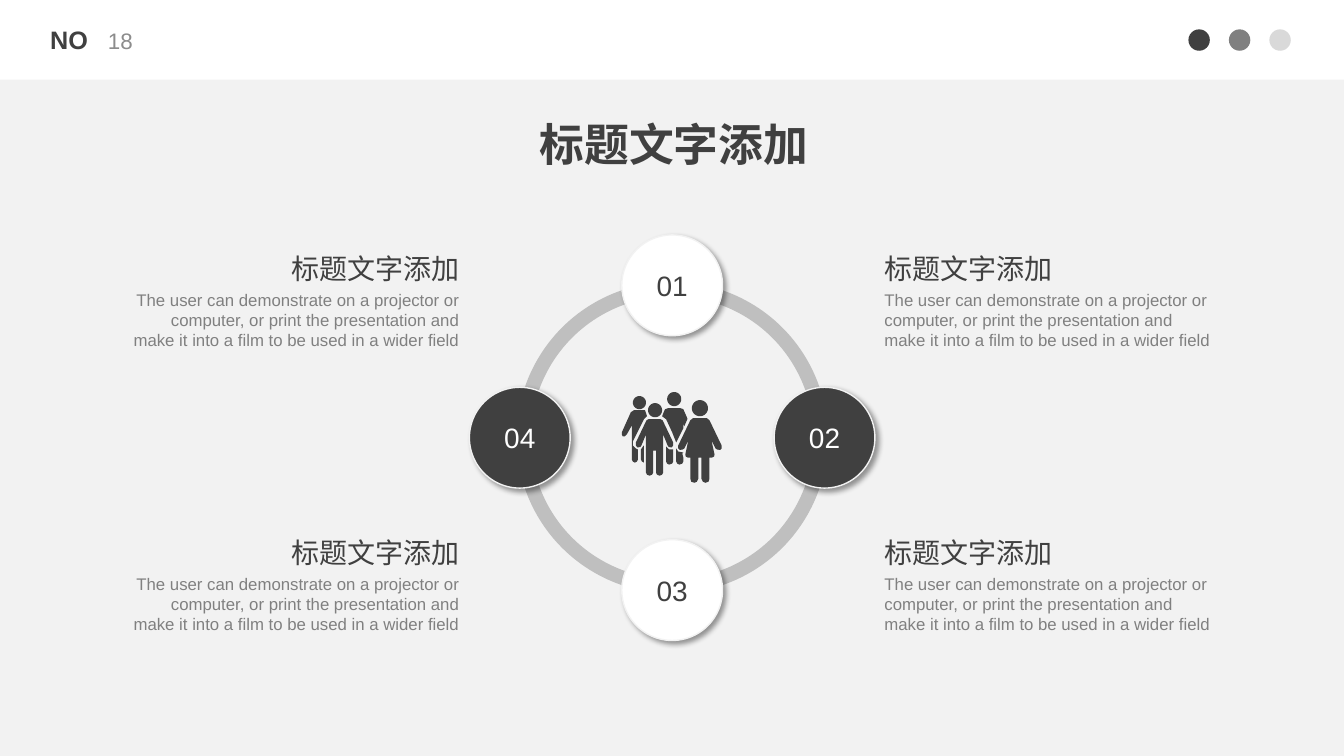
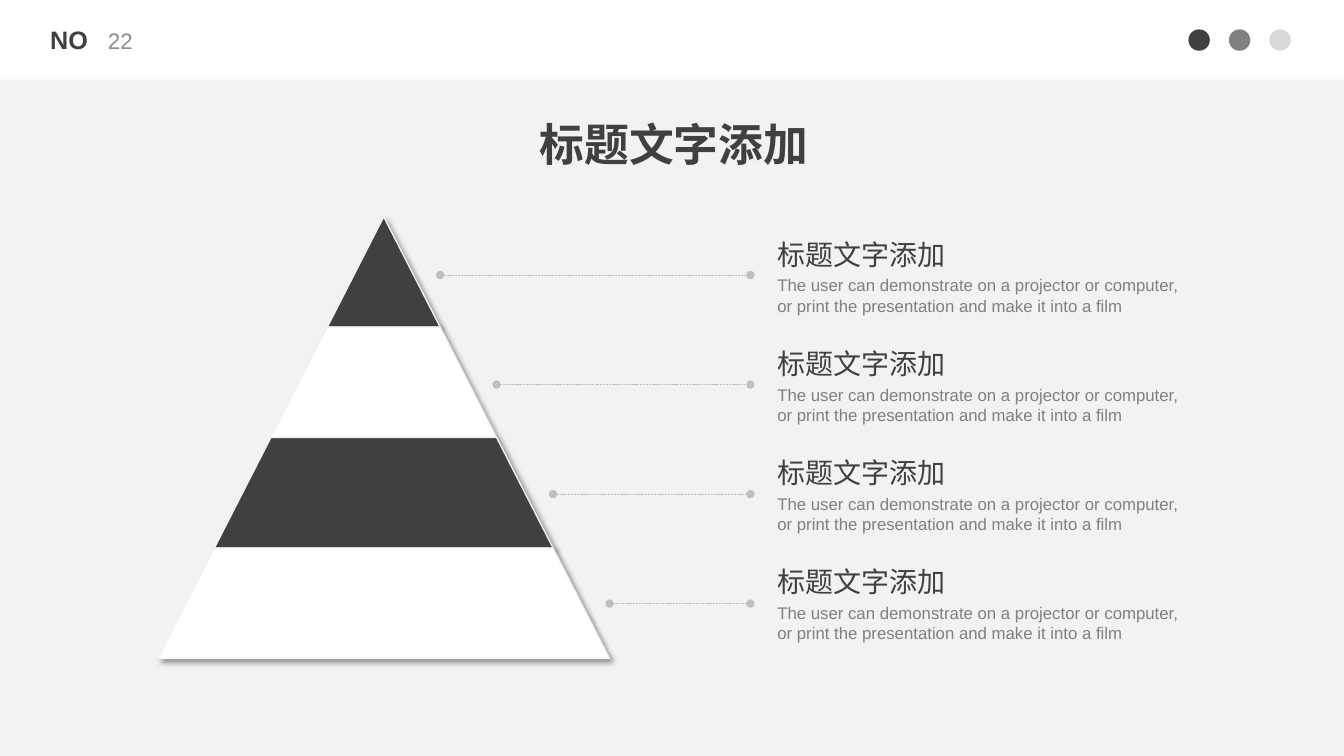
from math import cos, pi, sin

from lxml.etree import SubElement
from pptx import Presentation
from pptx.dml.color import RGBColor
from pptx.enum.dml import MSO_LINE
from pptx.enum.shapes import MSO_CONNECTOR, MSO_SHAPE as SHAPE
from pptx.enum.text import MSO_ANCHOR as ANCHOR, MSO_AUTO_SIZE, PP_ALIGN as ALIGN
from pptx.oxml.ns import qn
from pptx.util import Cm, Pt

COLORS = {
    "paper": "F2F2F2", "white": "FFFFFF", "dark": "404040", "gray": "808080",
    "number": "8C8C8C", "ring": "BFBFBF", "pale": "D9D9D9", "shadow": "000000",
}
LATIN, CHINESE = "Arial", "Noto Sans CJK SC"
SLIDE_WIDTH, SLIDE_HEIGHT = 33.87, 19.05
HEADING = "标题文字添加"
SHORT_BODY = ("The user can demonstrate on a projector or computer, "
              "or print the presentation and make it into a film")
LONG_BODY = SHORT_BODY + " to be used in a wider field"

# People icon on a grid 100 units wide
ICON_UNIT = 0.0254
# Right halves of the two front figures, measured from the neck
MAN = [(0, 0), (6, 0), (8, 1), (18.5, 23), (18.5, 26), (17, 28), (14, 27.5),
       (13, 26), (8.5, 15), (8.5, 53), (7.5, 55), (5, 56), (2.5, 55),
       (1.5, 53), (1.5, 31), (0, 31)]
WOMAN = [(0, 0), (7, 0), (9.5, 2), (21.5, 27), (21.5, 30), (20, 31.5),
         (17, 31), (15.5, 30), (11.5, 22), (14.5, 36), (14, 38), (12, 39),
         (9.5, 39), (9.5, 60), (8.5, 63), (5.5, 64), (3, 63), (1.5, 60),
         (1.5, 39), (0, 39)]
# Visible parts of the two figures behind
REAR_PARTS = [
    [(54, 56), (56, 59), (61, 60), (60, 61), (61, 65), (61, 69), (60, 71),
     (57, 72), (55, 71), (54, 69)],
    [(44, 54), (47, 57), (51, 57), (51, 69), (50, 71), (47, 72), (45, 71), (44, 69)],
    [(22, 53), (22, 70), (20, 69), (19, 67), (19, 57), (21, 54)],
    [(12, 18), (23, 18), (25, 24), (22, 27), (15, 41), (11, 49), (11, 53),
     (14, 56), (16, 57), (16, 67), (15, 69), (13, 70), (11, 69), (10, 67),
     (10, 33), (5, 42), (3, 44), (1, 44), (0, 42), (0, 40), (9, 20)],
    [(46, 16), (58, 16), (61, 17), (65, 26), (65, 27), (62, 34), (61, 31),
     (61, 36), (54, 50), (50, 40), (44, 27), (40, 24), (42, 19), (43, 17)],
]
HEADS = [(33, 18, 7), (77.5, 16, 8), (17.5, 10.5, 6.5), (52, 7, 7)]


def rgb(name):
    return RGBColor.from_string(COLORS[name])


# Basic parts
def paint(shape, fill, line=None):
    shape.shadow.inherit = False
    shape.fill.solid()
    shape.fill.fore_color.rgb = rgb(fill)
    if line:
        shape.line.color.rgb = rgb(line)
        shape.line.width = Pt(1)
    else:
        shape.line.fill.background()
    return shape


def add_preset(slide, kind, left, top, width, height, fill, line=None):
    shape = slide.shapes.add_shape(kind, Cm(left), Cm(top), Cm(width), Cm(height))
    return paint(shape, fill, line)


def add_outline(slide, contours, fill, line=None):
    contours = [[(Cm(x), Cm(y)) for x, y in points] for points in contours]
    builder = slide.shapes.build_freeform(*contours[0][0])
    for index, points in enumerate(contours):
        if index:
            builder.move_to(*points[0])
        builder.add_line_segments(points[1:], close=True)
    return paint(builder.convert_to_shape(), fill, line)


def cast_shadow(shape):
    effects = shape.element.spPr.find(qn("a:effectLst"))
    shadow = SubElement(effects, qn("a:outerShdw"), blurRad=str(Pt(4)),
                        dist=str(Pt(3)), dir="2700000", algn="tl", rotWithShape="0")
    color = SubElement(shadow, qn("a:srgbClr"), val=COLORS["shadow"])
    SubElement(color, qn("a:alpha"), val="40000")


def write(shape, text, size, color, font=LATIN, bold=False,
          align=ALIGN.LEFT, anchor=ANCHOR.TOP, wrap=True):
    frame = shape.text_frame
    frame.word_wrap = wrap
    frame.auto_size = MSO_AUTO_SIZE.NONE
    frame.vertical_anchor = anchor
    paragraph = frame.paragraphs[0]
    paragraph.alignment = align
    run = paragraph.add_run()
    run.text = text
    run.font.size = Pt(size)
    run.font.bold = bold
    run.font.color.rgb = rgb(color)
    run.font.name = font
    if font == CHINESE:
        SubElement(run._r.get_or_add_rPr(), qn("a:ea"), typeface=font)


def add_text(slide, left, top, width, height, *text, **style):
    box = slide.shapes.add_textbox(Cm(left), Cm(top), Cm(width), Cm(height))
    write(box, *text, **style)


# Band, page number and title of every slide
def add_base_slide(presentation, number):
    slide = presentation.slides.add_slide(presentation.slide_layouts[5])
    add_preset(slide, SHAPE.RECTANGLE, 0, 0, SLIDE_WIDTH, 2.01, "white")
    for index, color in enumerate(("dark", "gray", "pale")):
        add_preset(slide, SHAPE.OVAL, 29.95 + 1.02 * index, 0.74, 0.54, 0.54, color)
    add_text(slide, 1, 0.49, 1.47, 1.02, "NO", 18, "dark", bold=True,
             align=ALIGN.RIGHT, wrap=False)
    add_text(slide, 2.47, 0.51, 1.8, 1.02, number, 16, "number", anchor=ANCHOR.MIDDLE)
    title = slide.shapes.title
    title.left, title.top, title.width, title.height = map(Cm, (10.05, 2.82, 13.87, 1.63))
    write(title, HEADING, 32, "dark", font=CHINESE, bold=True, align=ALIGN.CENTER)
    return slide


# Heading with a paragraph below it
def add_text_block(slide, left, top, width, body, align=ALIGN.LEFT):
    add_text(slide, left, top, width, 1.12, HEADING, 20, "dark", font=CHINESE, align=align)
    add_text(slide, left, top + 0.96, width, 1.8, body, 12, "gray", align=align)


# Group of four people as one outline
def mirror_figure(half, neck_x, neck_y):
    outline = half + [(-x, y) for x, y in reversed(half[1:-1])]
    return [(neck_x + x, neck_y + y) for x, y in outline]


def circle_points(center_x, center_y, radius, steps=32):
    angles = [2 * pi * step / steps for step in range(steps)]
    return [(center_x + radius * cos(angle), center_y + radius * sin(angle))
            for angle in angles]


def add_people(slide, left, top):
    contours = REAR_PARTS + [mirror_figure(MAN, 32.5, 27), mirror_figure(WOMAN, 77.5, 26)]
    contours += [circle_points(*head) for head in HEADS]
    add_outline(slide, [[(left + x * ICON_UNIT, top + y * ICON_UNIT) for x, y in points]
                        for points in contours], "dark")


# Ring with four numbered nodes inside a square box
def add_ring(slide, left, top, size):
    node, ring = 2.54, 7.85
    orbit = (size - node) / 2
    center_x, center_y = left + size / 2, top + size / 2
    donut = add_preset(slide, SHAPE.DONUT, center_x - ring / 2,
                       center_y - ring / 2, ring, ring, "ring")
    donut.adjustments[0] = 0.046
    add_people(slide, center_x - 1.27, center_y - 1.15)
    directions = ((0, -1), (1, 0), (0, 1), (-1, 0))
    for index, (across, down) in enumerate(directions):
        fill, ink = (("white", "dark"), ("dark", "white"))[index % 2]
        circle = add_preset(slide, SHAPE.OVAL,
                            center_x + across * orbit - node / 2,
                            center_y + down * orbit - node / 2,
                            node, node, fill, "paper")
        cast_shadow(circle)
        write(circle, f"{index + 1:02}", 20, ink, align=ALIGN.CENTER, anchor=ANCHOR.MIDDLE)


# Pyramid of equal tiers
def add_pyramid(slide, left, top, width, height, tiers):
    center = left + width / 2
    for index in range(tiers):
        upper, lower = (width / 2 * step / tiers for step in (index, index + 1))
        y = top + height * index / tiers
        bottom = top + height * (index + 1) / tiers
        tier = add_outline(slide, [[
            (center - lower, bottom), (center - upper, y),
            (center + upper, y), (center + lower, bottom),
        ]], ("dark", "white")[index % 2], "paper")
        cast_shadow(tier)


# Dotted leader with round ends
def add_leader(slide, start, end, y):
    leader = slide.shapes.add_connector(MSO_CONNECTOR.STRAIGHT,
                                        Cm(start), Cm(y), Cm(end), Cm(y))
    leader.line.color.rgb = rgb("ring")
    leader.line.width = Pt(0.5)
    leader.line.dash_style = MSO_LINE.SQUARE_DOT
    properties = leader.element.spPr
    for tag in ("a:headEnd", "a:tailEnd"):
        SubElement(properties.find(qn("a:ln")), qn(tag), type="oval")
    SubElement(properties, qn("a:effectLst"))


# Slides
def add_ring_slide(presentation):
    slide = add_base_slide(presentation, "18")
    add_ring(slide, 11.83, 5.92, 10.22)
    for left, align in ((22.04, ALIGN.LEFT), (2.94, ALIGN.RIGHT)):
        for top in (6.22, 13.37):
            add_text_block(slide, left, top, 8.89, LONG_BODY, align)


def add_pyramid_slide(presentation):
    slide = add_base_slide(presentation, "22")
    left, top, width, height, tiers = 3.98, 5.46, 11.38, 11.13, 4
    add_pyramid(slide, left, top, width, height, tiers)
    for index in range(tiers):
        edge = left + width / 2 * (1 + (index + 1) / tiers)
        add_leader(slide, edge, 18.91, top + 1.47 + 2.76 * index)
        add_text_block(slide, 19.34, top + 0.39 + 2.75 * index, 10.92, SHORT_BODY)


def main():
    presentation = Presentation()
    presentation.slide_width = Cm(SLIDE_WIDTH)
    presentation.slide_height = Cm(SLIDE_HEIGHT)
    background = presentation.slide_master.background.fill
    background.solid()
    background.fore_color.rgb = rgb("paper")
    add_ring_slide(presentation)
    add_pyramid_slide(presentation)
    presentation.save("out.pptx")


if __name__ == "__main__":
    main()
